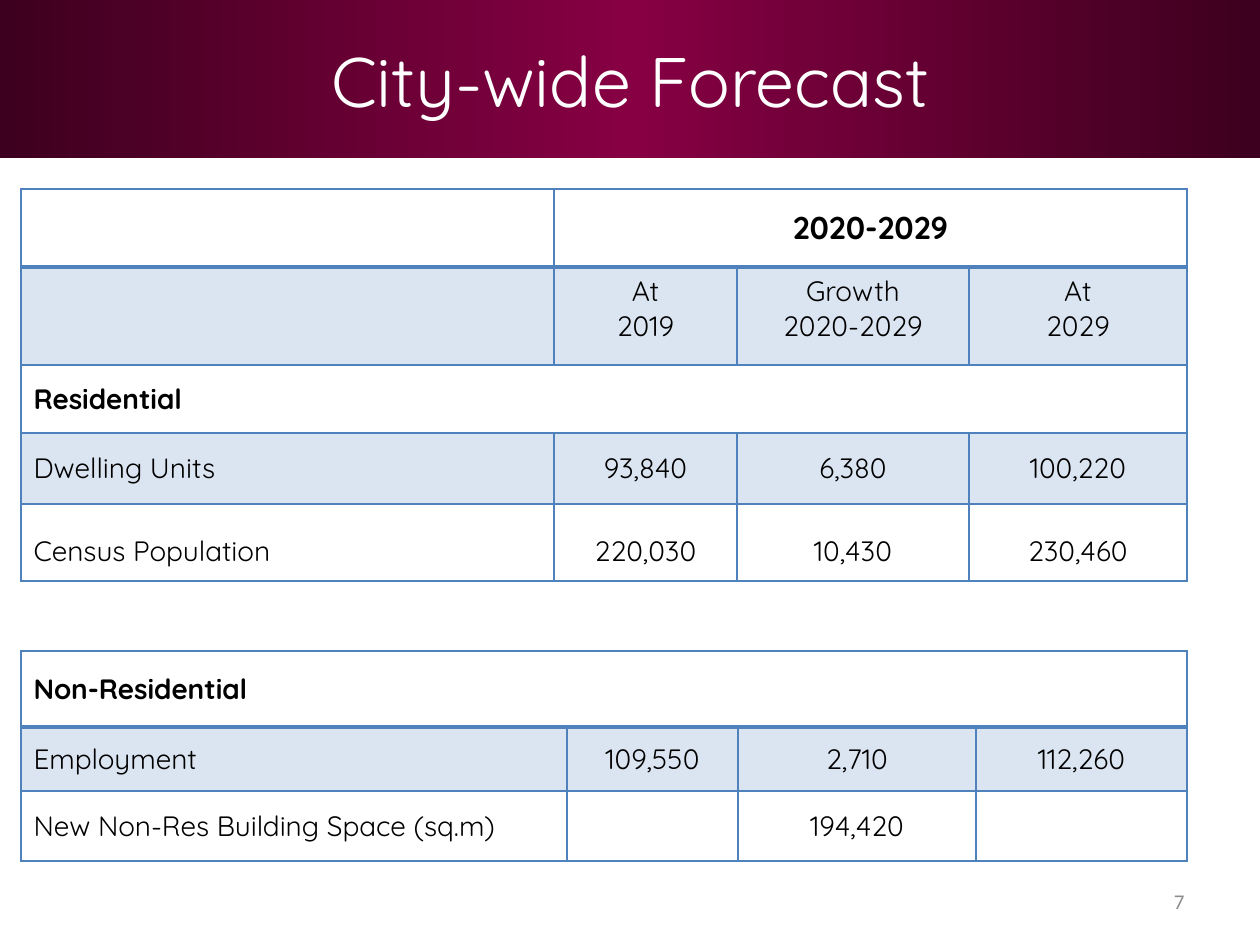
"""Builds the City-wide Forecast slide with its two forecast tables."""
from lxml.etree import SubElement
from pptx import Presentation
from pptx.dml.color import RGBColor
from pptx.enum.shapes import MSO_SHAPE as Shape
from pptx.enum.text import MSO_ANCHOR as Anchor, PP_ALIGN as Align
from pptx.oxml import parse_xml
from pptx.oxml.ns import nsdecls, qn
from pptx.util import Emu, Pt

BLACK = RGBColor(0x00, 0x00, 0x00)
WHITE = RGBColor(0xFF, 0xFF, 0xFF)
GREY = RGBColor(0x8C, 0x8C, 0x8C)
BLUE = RGBColor(0x4F, 0x81, 0xBD)
PLUM = RGBColor(0x3D, 0x00, 0x1E)
MAGENTA = RGBColor(0x86, 0x00, 0x43)


def px(length):
    return Emu(round(length * 914400 / 126))


def write(frame, text, size=16, font="Quicksand", color=BLACK, bold=False,
          align=Align.LEFT, spacing=None):
    for index, line in enumerate(text.split("\n")):
        paragraph = frame.add_paragraph() if index else frame.paragraphs[0]
        paragraph.alignment = align
        if spacing:
            paragraph.line_spacing = spacing
        run = paragraph.add_run()
        run.text = line
        run.font.size, run.font.name, run.font.bold = Pt(size), font, bold
        run.font.color.rgb = color


class ForecastSlide:
    def __init__(self, deck):
        self.border = BLUE
        self.tint = 20000
        self.slide = deck.slides.add_slide(deck.slide_layouts[6])

    def banner(self, left, top, width, height):
        band = self.slide.shapes.add_shape(
            Shape.RECTANGLE, px(left), px(top), px(width), px(height))
        band.shadow.inherit = False
        band.line.fill.background()
        band.fill.gradient()
        band.fill.gradient_angle = 0
        stops = band.fill._fill._gradFill.gsLst
        for stop in list(stops):
            stops.remove(stop)
        for position, color in ((0, PLUM), (50000, MAGENTA), (100000, PLUM)):
            stops.append(parse_xml(
                f'<a:gs {nsdecls("a")} pos="{position}"><a:srgbClr val="{color}"/></a:gs>'))

    def label(self, text, left, top, width, height, **style):
        frame = self.slide.shapes.add_textbox(
            px(left), px(top), px(width), px(height)).text_frame
        frame.word_wrap = True
        frame.vertical_anchor = Anchor.MIDDLE
        write(frame, text, **style)

    def edges(self, cell, row):
        top = 2 if row == 1 else 1
        bottom = 2 if row == 0 else 1
        properties = cell._tc.get_or_add_tcPr()
        for index, (side, weight) in enumerate(zip("LRTB", (1, 1, top, bottom))):
            properties.insert(index, parse_xml(
                f'<a:ln{side} {nsdecls("a")} w="{Pt(weight)}"><a:solidFill>'
                f'<a:srgbClr val="{self.border}"/></a:solidFill></a:ln{side}>'))

    def table(self, left, top, widths, heights, rows, merges, styles):
        grid = self.slide.shapes.add_table(
            len(heights), len(widths), px(left), px(top),
            px(sum(widths)), px(sum(heights))).table
        grid.first_row = grid.horz_banding = False
        for column, width in zip(grid.columns, widths):
            column.width = px(width)
        for row, height in zip(grid.rows, heights):
            row.height = px(height)
        for row, start in merges.items():
            grid.cell(row, start).merge(grid.cell(row, len(widths) - 1))
        for row, texts in enumerate(rows):
            for column in range(len(widths)):
                cell = grid.cell(row, column)
                if row % 2:
                    cell.fill.solid()
                    cell.fill.fore_color.rgb = self.border
                    shade = cell._tc.tcPr.find(".//" + qn("a:srgbClr"))
                    SubElement(shade, qn("a:alpha")).set("val", str(self.tint))
                else:
                    cell.fill.background()
                self.edges(cell, row)
                text = texts[column] if column < len(texts) else ""
                cell.vertical_anchor = Anchor.TOP if "\n" in text else Anchor.MIDDLE
                if text:
                    write(cell.text_frame, text, bold=row in merges,
                          align=Align.CENTER if column else Align.LEFT,
                          **styles.get(row, {}))


def main():
    deck = Presentation()
    deck.slide_width, deck.slide_height = px(1260), px(945)
    forecast = ForecastSlide(deck)
    forecast.banner(0, 0, 1260, 158)
    forecast.label("City-wide Forecast", 0, 0, 1260, 158,
                   size=40, color=WHITE, align=Align.CENTER)
    forecast.label("7", 903, 876, 294, 50,
                   size=12, font="Calibri", color=GREY, align=Align.RIGHT)
    forecast.table(
        21, 189, (533, 183, 232, 218), (78, 98, 68, 71, 77),
        (("", "2020-2029"),
         ("", "At\n2019", "Growth\n2020-2029", "At\n2029"),
         ("Residential",),
         ("Dwelling Units", "93,840", "6,380", "100,220"),
         ("Census Population", "220,030", "10,430", "230,460")),
        merges={0: 1, 2: 0}, styles={0: {"size": 18}, 4: {"spacing": 1.5}})
    forecast.table(
        21, 651, (546, 171, 238, 211), (76, 64, 70),
        (("Non-Residential",),
         ("Employment", "109,550", "2,710", "112,260"),
         ("New Non-Res Building Space (sq.m)", "", "194,420")),
        merges={0: 0}, styles={})
    deck.save("out.pptx")


if __name__ == "__main__":
    main()
